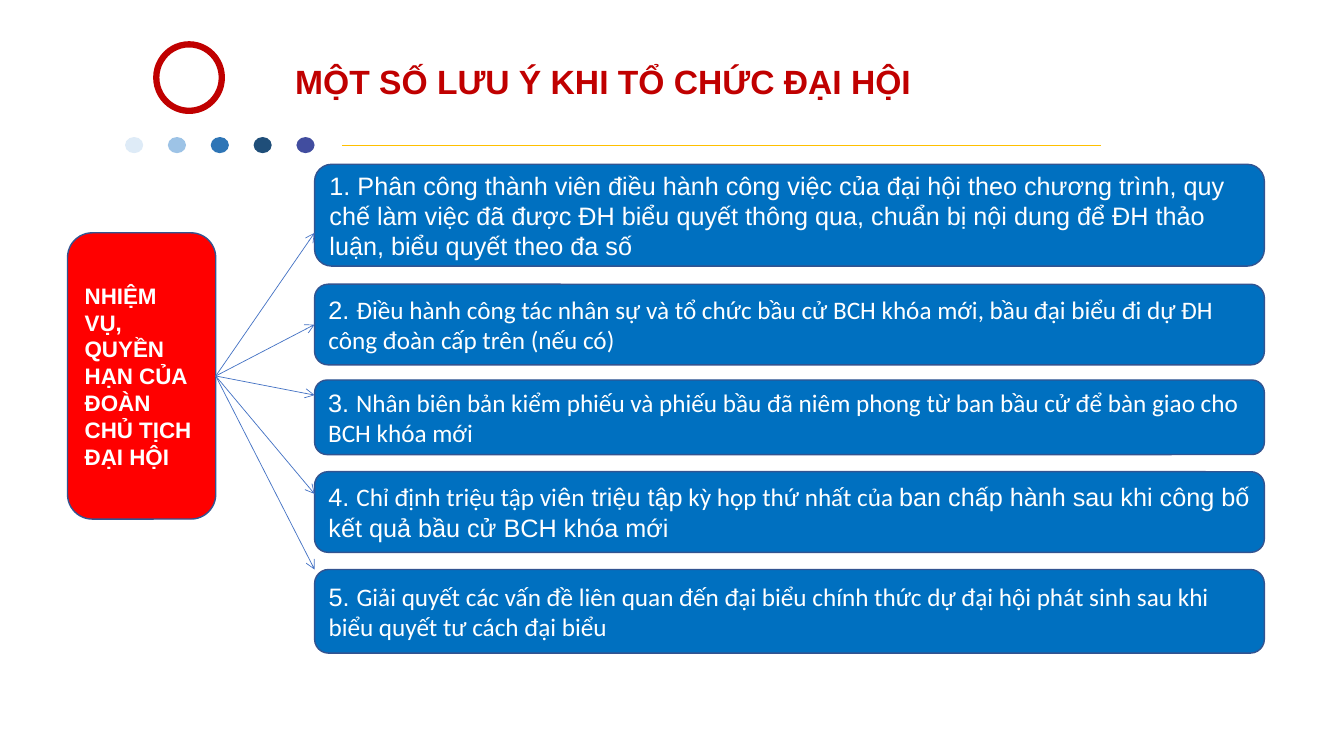
"""Builds a slide on the duties of the congress presidium."""
from dataclasses import dataclass

from lxml import etree
from pptx import Presentation
from pptx.dml.color import RGBColor
from pptx.enum.shapes import MSO_CONNECTOR as Connector, MSO_SHAPE as Preset
from pptx.enum.text import MSO_ANCHOR as Anchor, PP_ALIGN as Align
from pptx.oxml.ns import qn
from pptx.shapes.autoshape import Shape
from pptx.shapes.connector import Connector as ConnectorShape
from pptx.slide import Slide
from pptx.util import Inches, Pt

WHITE = RGBColor(0xFF, 0xFF, 0xFF)
RED = RGBColor(0xFF, 0x00, 0x00)
DARK_RED = RGBColor(0xC0, 0x00, 0x00)
BLUE = RGBColor(0x00, 0x70, 0xC0)
BORDER = RGBColor(0x32, 0x54, 0x91)
ARROW = RGBColor(0x44, 0x72, 0xC4)
GOLD = RGBColor(0xFF, 0xC0, 0x00)
DOT_COLORS = [
    RGBColor(0xDE, 0xEB, 0xF7),
    RGBColor(0x9D, 0xC3, 0xE6),
    RGBColor(0x2E, 0x75, 0xB6),
    RGBColor(0x1F, 0x4E, 0x79),
    RGBColor(0x41, 0x4D, 0x9F),
]
ARIAL, CALIBRI = "Arial", "Calibri"
DUTY_LEFT, DUTY_WIDTH = 3.12, 9.42
HUB_RIGHT, HUB_MIDDLE = 2.14, 3.73
DOT_LEFT, DOT_STEP = 1.24, 0.425

Run = tuple[str, str]


@dataclass(frozen=True)
class Box:
    left: float
    top: float
    width: float
    height: float


@dataclass(frozen=True)
class Duty:
    top: float
    height: float
    arrow_y: float
    runs: list[Run]


DUTIES = [
    Duty(1.63, 1.01, 2.31, [
        ("1. Phân công thành viên điều hành công việc của đại hội theo chương trình, "
         "quy chế làm việc đã được ĐH biểu quyết thông qua, chuẩn bị nội dung để ĐH "
         "thảo luận, biểu quyết theo đa số", ARIAL)]),
    Duty(2.82, 0.8, 3.22, [
        ("2. ", ARIAL),
        ("Điều hành công tác nhân sự và tổ chức bầu cử BCH khóa mới, bầu đại biểu "
         "đi dự ĐH công đoàn cấp trên (nếu có)", CALIBRI)]),
    Duty(3.77, 0.74, 3.92, [
        ("3. ", ARIAL),
        ("Nhân biên bản kiểm phiếu và phiếu bầu đã niêm phong từ ban bầu cử để bàn "
         "giao cho BCH khóa mới", CALIBRI)]),
    Duty(4.68, 0.8, 4.9, [
        ("4. ", ARIAL),
        ("Chỉ định triệu tập vi", CALIBRI),
        ("ê", ARIAL),
        ("n", CALIBRI),
        (" triệu tập", ARIAL),
        (" kỳ họp thứ nhất của ", CALIBRI),
        ("ban chấp hành sau khi công bố kết quả bầu cử BCH khóa mới", ARIAL)]),
    Duty(5.65, 0.83, 5.65, [
        ("5. ", ARIAL),
        ("Giải quyết các vấn đề liên quan đến đại biểu chính thức dự đại hội phát "
         "sinh sau khi biểu quyết tư cách đại biểu", CALIBRI)]),
]


def write_text(shape: Shape, runs: list[Run], *, size: float, color: RGBColor,
               bold: bool = False, anchor: Anchor = Anchor.MIDDLE) -> None:
    """Fill a shape with one left-aligned paragraph."""
    frame = shape.text_frame
    frame.word_wrap = True
    frame.vertical_anchor = anchor
    paragraph = frame.paragraphs[0]
    paragraph.alignment = Align.LEFT
    for text, font_name in runs:
        run = paragraph.add_run()
        run.text = text
        run.font.name = font_name
        run.font.size = Pt(size)
        run.font.bold = bold
        run.font.color.rgb = color


def add_preset(slide: Slide, preset: Preset, box: Box, *, fill: RGBColor | None = None,
               line: RGBColor | None = None, line_width: float = 1) -> Shape:
    """Add a preset shape without shadow."""
    shape = slide.shapes.add_shape(preset, Inches(box.left), Inches(box.top),
                                   Inches(box.width), Inches(box.height))
    shape.shadow.inherit = False
    if fill is None:
        shape.fill.background()
    else:
        shape.fill.solid()
        shape.fill.fore_color.rgb = fill
    if line is None:
        shape.line.fill.background()
    else:
        shape.line.color.rgb = line
        shape.line.width = Pt(line_width)
    return shape


def add_line(slide: Slide, start: tuple[float, float], end: tuple[float, float], *,
             color: RGBColor, arrow: bool = False) -> ConnectorShape:
    """Add a thin straight line, with an arrowhead at its end if asked."""
    connector = slide.shapes.add_connector(
        Connector.STRAIGHT, *(Inches(value) for value in (*start, *end)))
    connector.line.color.rgb = color
    connector.line.width = Pt(0.5)
    if arrow:
        outline = connector.line._get_or_add_ln()
        etree.SubElement(outline, qn("a:tailEnd"), type="arrow")
    etree.SubElement(connector._element.spPr, qn("a:effectLst"))
    return connector


def add_header(slide: Slide) -> None:
    """Add the title, the emblem ring, the dots and the divider."""
    title = slide.shapes.add_textbox(Inches(2.83), Inches(0.56), Inches(7.6), Inches(0.5))
    write_text(title, [("MỘT SỐ LƯU Ý KHI TỔ CHỨC ĐẠI HỘI", ARIAL)],
               size=24, color=DARK_RED, bold=True, anchor=Anchor.TOP)
    for index, color in enumerate(DOT_COLORS):
        dot = Box(DOT_LEFT + index * DOT_STEP, 1.36, 0.18, 0.16)
        add_preset(slide, Preset.OVAL, dot, fill=color)
    add_line(slide, (3.39, 1.44), (10.92, 1.44), color=GOLD)
    add_preset(slide, Preset.OVAL, Box(1.55, 0.44, 0.65, 0.66),
               line=DARK_RED, line_width=4.5)


def add_duties(slide: Slide) -> None:
    """Add the red hub, the duty boxes and the arrows between them."""
    hub = add_preset(slide, Preset.ROUNDED_RECTANGLE, Box(0.67, 2.31, 1.47, 2.84),
                     fill=RED, line=BORDER)
    write_text(hub, [("NHIỆM VỤ, QUYỀN HẠN CỦA ĐOÀN CHỦ TỊCH ĐẠI HỘI", ARIAL)],
               size=16, color=WHITE, bold=True)
    for duty in DUTIES:
        shape = add_preset(slide, Preset.ROUNDED_RECTANGLE,
                           Box(DUTY_LEFT, duty.top, DUTY_WIDTH, duty.height),
                           fill=BLUE, line=BORDER)
        write_text(shape, duty.runs, size=18, color=WHITE)
        arrow = add_line(slide, (HUB_RIGHT, HUB_MIDDLE), (DUTY_LEFT, duty.arrow_y),
                         color=ARROW, arrow=True)
        arrow.begin_connect(hub, 3)
        if abs(duty.top + duty.height / 2 - duty.arrow_y) < 0.01:
            arrow.end_connect(shape, 1)


def main() -> None:
    """Create and save the presentation."""
    presentation = Presentation()
    presentation.slide_width = Inches(13.33)
    presentation.slide_height = Inches(7.5)
    slide = presentation.slides.add_slide(presentation.slide_layouts[6])
    add_header(slide)
    add_duties(slide)
    presentation.save("out.pptx")


if __name__ == "__main__":
    main()
